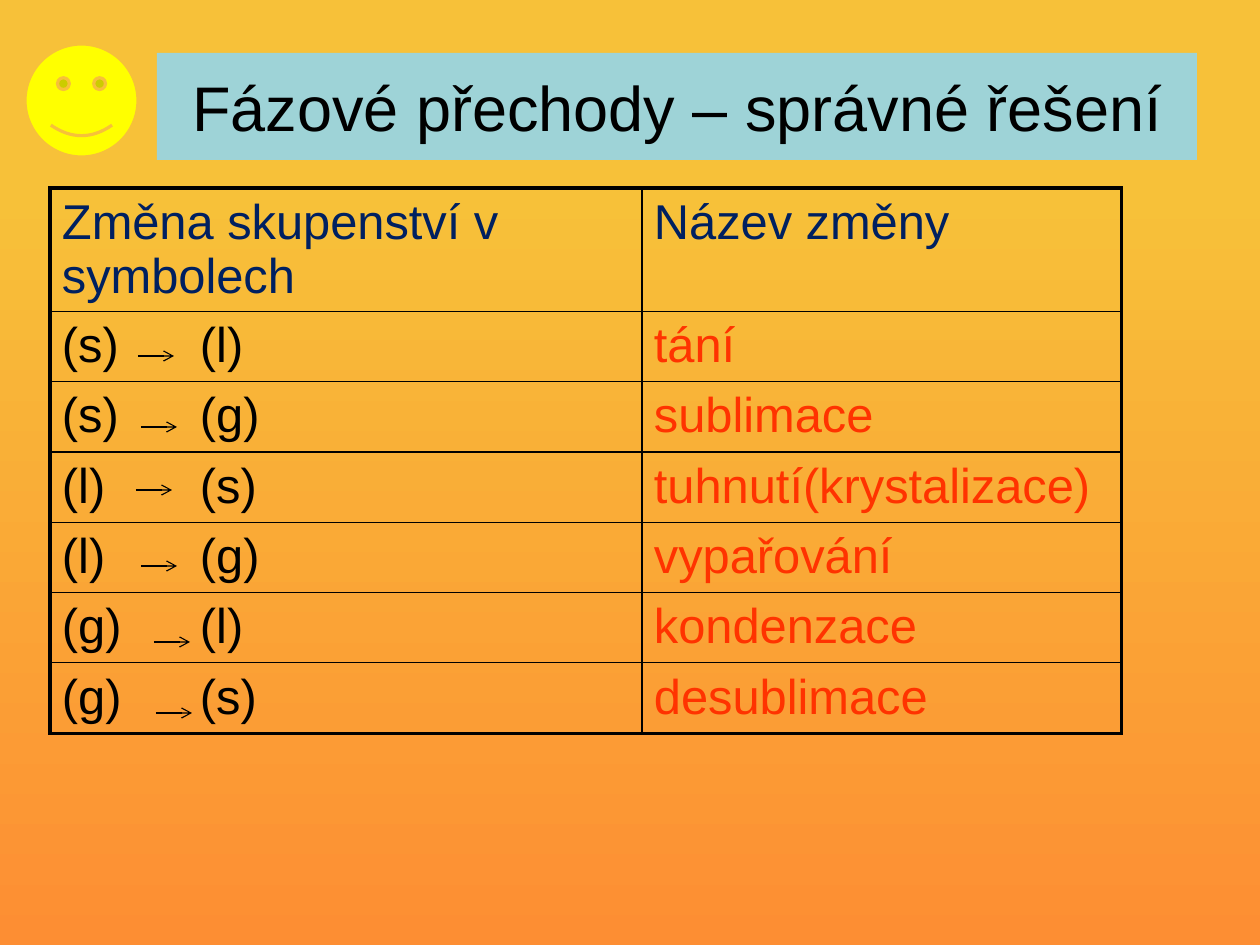
from lxml.etree import SubElement
from pptx import Presentation
from pptx.dml.color import RGBColor
from pptx.enum.shapes import MSO_CONNECTOR, MSO_SHAPE
from pptx.enum.text import MSO_ANCHOR, PP_ALIGN
from pptx.oxml.ns import qn
from pptx.util import Pt

SCALE = 8064  # EMU per px
COLORS = {"top": "F7C139", "bottom": "FD8E33", "band": "9ED3D7",
          "smile": "FFFF00", "ink": "000000", "head": "002060",
          "name": "FF3300"}
HEADS = ("Změna skupenství v symbolech", "Název změny")
# from, to, name, arrow start within the table
ROWS = [("s", "l", "tání", (88, 168)),
        ("s", "g", "sublimace", (91, 239)),
        ("l", "s", "tuhnutí(krystalizace)", (86, 302)),
        ("l", "g", "vypařování", (91, 378)),
        ("g", "l", "kondenzace", (104, 454)),
        ("g", "s", "desublimace", (106, 525))]
CELL = {"margin_left": 12, "margin_right": 12, "margin_top": 7,
        "margin_bottom": 7}
TAB, ARROW = 138, 36


def px(num):
    return round(num * SCALE)


def rgb(key):
    return RGBColor.from_string(COLORS[key])


def apply(item, form):
    for key, val in form.items():
        setattr(item, key, val)


def write(frame, text, size, color):
    para = frame.paragraphs[0]
    run = para.add_run()
    run.text = text
    apply(run.font, {"name": "Arial", "size": Pt(size)})
    run.font.color.rgb = rgb(color)
    return para


def add_block(slide, kind, box, fill):
    block = slide.shapes.add_shape(kind, *map(px, box))
    block.shadow.inherit = False
    block.fill.solid()
    block.fill.fore_color.rgb = rgb(fill)
    return block


def paint_back(slide):
    fill = slide.background.fill
    fill.gradient()
    fill.gradient_angle = 270
    for stop, spot, key in zip(fill.gradient_stops, (0.2, 1),
                               ("top", "bottom")):
        stop.position = spot
        stop.color.rgb = rgb(key)


def add_title(slide, box):
    band = add_block(slide, MSO_SHAPE.RECTANGLE, box, "band")
    band.line.fill.background()
    apply(band.text_frame, {"word_wrap": True,
                            "vertical_anchor": MSO_ANCHOR.MIDDLE})
    para = write(band.text_frame, "Fázové přechody – správné řešení", 40, "ink")
    para.alignment = PP_ALIGN.CENTER


def add_smile(slide, box):
    face = add_block(slide, MSO_SHAPE.SMILEY_FACE, box, "smile")
    face.line.color.rgb = rgb("top")
    face.line.width = Pt(2)


def set_edge(cell, side, width):
    edge = SubElement(cell._tc.get_or_add_tcPr(), qn(f"a:ln{side}"),
                      w=str(Pt(width)))
    fill = SubElement(edge, qn("a:solidFill"))
    SubElement(fill, qn("a:srgbClr"), val=COLORS["ink"])


def add_grid(slide, box):
    left, top, width, height = box
    count, first, split = len(ROWS) + 1, 122, 592
    table = slide.shapes.add_table(count, 2, *map(px, box)).table
    apply(table, {"first_row": False, "horz_banding": False})
    for col, size in zip(table.columns, (split, width - split)):
        col.width = px(size)
    for i, row in enumerate(table.rows):
        row.height = px((height - first) / len(ROWS) if i else first)

    lines = [HEADS] + [(f"({a})\t({b})", name) for a, b, name, _ in ROWS]
    for i, line in enumerate(lines):
        for j, text in enumerate(line):
            cell = table.cell(i, j)
            apply(cell, {key: px(val) for key, val in CELL.items()})
            color = ("ink", "name")[j] if i else "head"
            para = write(cell.text_frame, text, 31, color)
            if "\t" in text:
                tabs = SubElement(para._p.get_or_add_pPr(), qn("a:tabLst"))
                SubElement(tabs, qn("a:tab"), pos=str(px(TAB)), algn="l")
            outer = {"L": j == 0, "R": j == 1, "T": i == 0,
                     "B": i == count - 1}
            for side, edge in outer.items():
                set_edge(cell, side, 2.25 if edge else 1)
            cell.fill.background()

    # Arrows between the symbols
    for *_, (x, y) in ROWS:
        add_arrow(slide, left + x, top + y)


def add_arrow(slide, x, y):
    arrow = slide.shapes.add_connector(
        MSO_CONNECTOR.STRAIGHT, px(x), px(y), px(x + ARROW), px(y))
    arrow.line.color.rgb = rgb("ink")
    arrow.line.width = Pt(0.75)
    SubElement(arrow.line._get_or_add_ln(), qn("a:tailEnd"), type="arrow")
    SubElement(arrow._element.spPr, qn("a:effectLst"))


def main():
    deck = Presentation()
    apply(deck, {"slide_width": px(1260), "slide_height": px(945)})
    slide = deck.slides.add_slide(deck.slide_layouts[6])
    paint_back(slide)
    add_title(slide, (157, 53, 1040, 107))
    add_grid(slide, (50, 188, 1072, 544))
    add_smile(slide, (25, 44, 113, 113))
    deck.save("out.pptx")


if __name__ == "__main__":
    main()
